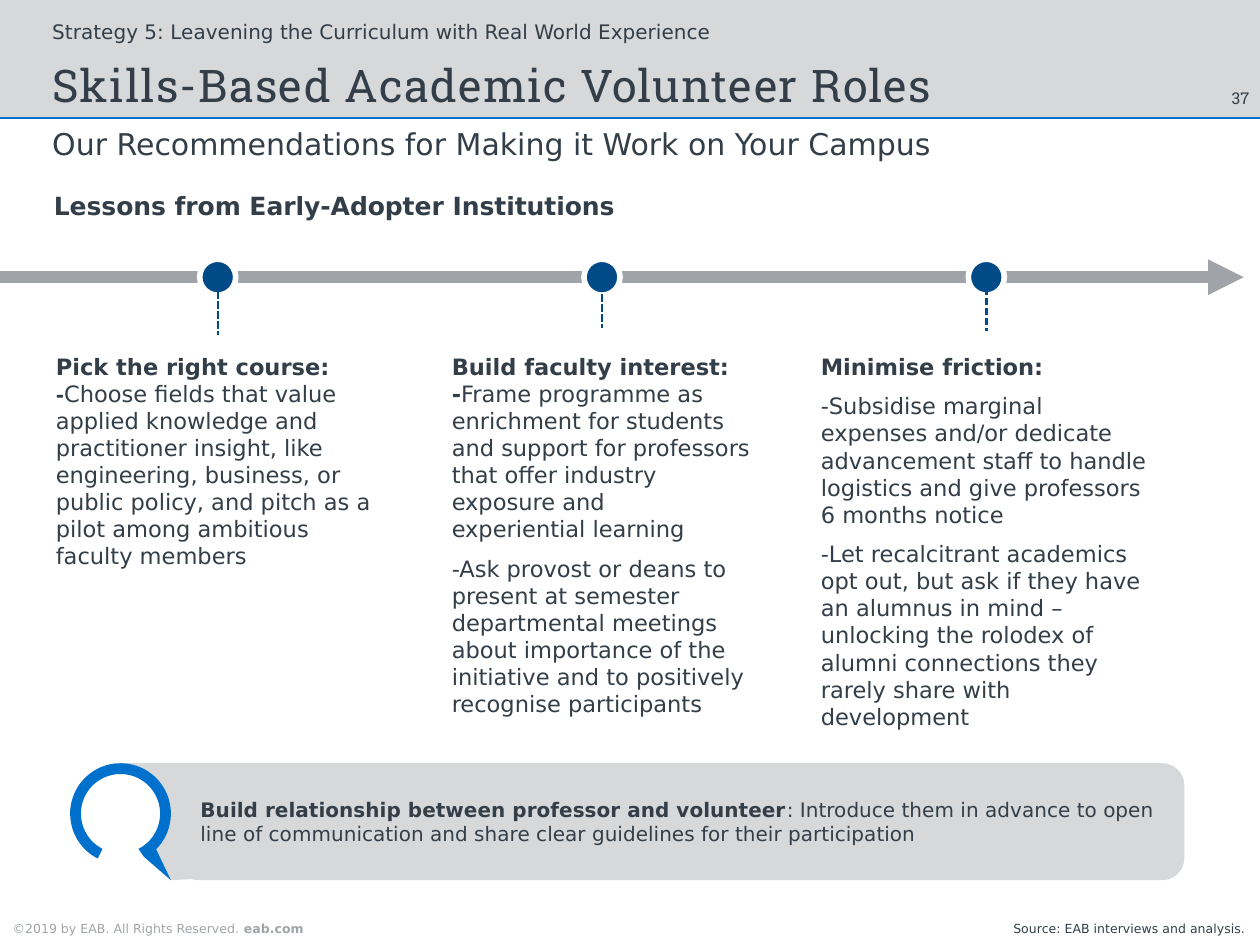
import math

from lxml import etree
from pptx import Presentation
from pptx import util as u
from pptx.dml.color import RGBColor
from pptx.enum import dml, shapes, text
from pptx.oxml.ns import qn

WIDTH, HEIGHT = 7, 5.25
MARGIN = 0.29
BAND = HEIGHT / 8
AXIS_Y = 1.54
FIRST_DOT, DOT_GAP, DOT = 1.21, 2.135, 0.2
DASH = 0.24
COLUMN_TOP = 1.94
SANS, SLAB = "DejaVu Sans", "Roboto Slab"
COLORS = {
    "ink": "333E48", "muted": "A0A4A9", "panel": "D6D8DA",
    "blue": "0070CD", "navy": "004A88", "white": "FFFFFF",
}
BREAK = "\n"

# Each stage: text left, text width, height, start of dashed line, paragraphs of (text, bold, size)
STAGES = [
    (0.29, 1.85, 1.25, 1.62, [
        [("Pick the right course:", True, 9), BREAK, ("-", True, 8),
         ("Choose fields that value applied knowledge and practitioner insight, like engineering, "
          "business, or public policy, and pitch as a pilot among ambitious faculty members", False, 9)],
    ]),
    (2.49, 1.7, 2.06, 1.58, [
        [("Build faculty interest:", True, 9), BREAK, ("-", True, 9),
         ("Frame programme as enrichment for students and support for professors that offer "
          "industry exposure and  experiential learning", False, 9)],
        [("-Ask provost or deans to present at semester departmental meetings about importance "
          "of the initiative and to positively recognise participants", False, 9)],
    ]),
    (4.54, 1.88, 2.15, 1.6, [
        [("Minimise friction:", True, 9)],
        [("-Subsidise marginal expenses and/or dedicate advancement staff to handle logistics "
          "and give professors 6 months notice", False, 9)],
        [("-Let recalcitrant academics opt out, but ask if they have an alumnus in mind – "
          "unlocking the rolodex of alumni connections they rarely share with development", False, 9)],
    ]),
]


def rgb(name):
    return RGBColor.from_string(COLORS[name])


def inches(*lengths):
    return [u.Inches(length) for length in lengths]


def write(box, paragraphs, color="ink", font=SANS, insets=(0, 0, 0, 0),
          anchor=text.MSO_ANCHOR.TOP, align=text.PP_ALIGN.LEFT):
    """Fill a shape with paragraphs, each a list of (text, bold, size) spans or BREAK."""
    frame = box.text_frame
    frame.word_wrap = True
    frame.vertical_anchor = anchor
    (frame.margin_left, frame.margin_top,
     frame.margin_right, frame.margin_bottom) = inches(*insets)
    for index, spans in enumerate(paragraphs):
        para = frame.add_paragraph() if index else frame.paragraphs[0]
        para.alignment = align
        para.space_before = u.Pt(5 if index else 0)
        for item in spans:
            if item == BREAK:
                para.add_line_break()
                continue
            span = para.add_run()
            span.text, span.font.bold = item[:2]
            span.font.size = u.Pt(item[2])
            span.font.name = font
            span.font.color.rgb = rgb(color)


def add_text(page, area, paragraphs, **style):
    box = page.shapes.add_textbox(*inches(*area))
    write(box, paragraphs, **style)
    box.text_frame.auto_size = text.MSO_AUTO_SIZE.SHAPE_TO_FIT_TEXT


def paint(shape, fill, outline=None, weight=0):
    shape.shadow.inherit = False
    shape.fill.solid()
    shape.fill.fore_color.rgb = rgb(fill)
    if outline:
        shape.line.color.rgb = rgb(outline)
        shape.line.width = u.Pt(weight)
    else:
        shape.line.fill.background()


def add_block(page, kind, area, fill, **outline):
    block = page.shapes.add_shape(kind, *inches(*area))
    paint(block, fill, **outline)
    return block


def add_line(page, start, end, color, weight, dash=None, arrow=False):
    line = page.shapes.add_connector(shapes.MSO_CONNECTOR.STRAIGHT, *inches(*start, *end))
    line.line.color.rgb = rgb(color)
    line.line.width = u.Pt(weight)
    if dash:
        line.line.dash_style = dash
    if arrow:
        etree.SubElement(line.line._get_or_add_ln(), qn("a:tailEnd"), type="triangle")
    etree.SubElement(line._element.spPr, qn("a:effectLst"))


def add_outline(page, points, fill):
    corners = [inches(*point) for point in points]
    builder = page.shapes.build_freeform(*corners[0])
    builder.add_line_segments(corners[1:], close=True)
    paint(builder.convert_to_shape(), fill)


def arc(center, radius, start, end, steps=60):
    """Points along a circle; degrees run clockwise from the right."""
    angles = [math.radians(start + (end - start) * step / steps) for step in range(steps + 1)]
    return [(center[0] + radius * math.cos(a), center[1] + radius * math.sin(a)) for a in angles]


def add_header(page):
    add_block(page, shapes.MSO_SHAPE.RECTANGLE, (0, 0, WIDTH, BAND), "panel")
    add_line(page, (0, BAND), (WIDTH, BAND), "blue", 0.75)
    add_text(page, (6.74, 0.49, 0.2, 0.11), [[("37", False, 6.5)]],
             font=SLAB, align=text.PP_ALIGN.RIGHT)
    add_text(page, (MARGIN, 0.11, 5.65, 0.13),
             [[("Strategy 5: Leavening the Curriculum with Real World Experience", False, 8)]])
    add_text(page, (MARGIN, 0.7, 6.42, 0.2),
             [[("Our Recommendations for Making it Work on Your Campus", False, 12)]])

    title = page.shapes.title
    title.left, title.top, title.width, title.height = inches(MARGIN, 0.34, 5.98, 0.28)
    write(title, [[("Skills-Based Academic Volunteer Roles", False, 18)]],
          font=SLAB, anchor=text.MSO_ANCHOR.BOTTOM)
    title.text_frame.auto_size = text.MSO_AUTO_SIZE.NONE
    para = title.text_frame.paragraphs[0]
    para.line_spacing = u.Pt(20)
    para.runs[0].font._element.set("spc", "50")
    # The title must lie in front of the header band
    page.shapes._spTree.append(title._element)


def add_timeline(page):
    add_text(page, (0.3, 1.06, 3.74, 0.17),
             [[("Lessons from Early-Adopter Institutions", True, 10)]])
    add_line(page, (0, AXIS_Y), (6.91, AXIS_Y), "muted", 4.75, arrow=True)
    for index, (left, width, height, dash_top, paragraphs) in enumerate(STAGES):
        center = FIRST_DOT + index * DOT_GAP
        add_block(page, shapes.MSO_SHAPE.OVAL,
                  (center - DOT / 2, AXIS_Y - DOT / 2, DOT, DOT),
                  "navy", outline="white", weight=2.25)
        add_line(page, (center, dash_top), (center, dash_top + DASH), "navy", 1,
                 dash=dml.MSO_LINE.SQUARE_DOT)
        add_text(page, (left, COLUMN_TOP, width, height), paragraphs, insets=(0.02,) * 4)


def add_callout(page):
    add_outline(page, [(0.67, 4.24), (1.12, 4.24), (1.12, 4.88), (0.95, 4.89), (0.81, 4.73),
                       (0.87, 4.65), (0.91, 4.58), (0.91, 4.45), (0.85, 4.34), (0.78, 4.29)],
                "panel")
    panel = add_block(page, shapes.MSO_SHAPE.ROUNDED_RECTANGLE, (0.98, 4.24, 5.6, 0.65), "panel")
    panel.adjustments[0] = 0.19
    write(panel, [[("Build relationship between professor and volunteer", True, 8),
                   (": Introduce them in advance to open line of communication and share clear "
                    "guidelines for their participation", False, 8)]],
          insets=(0.1, 0.05, 0.1, 0.05), anchor=text.MSO_ANCHOR.MIDDLE)
    center, tail = (0.67, 4.52), [(0.95, 4.89), (0.8, 4.76)]
    ring = arc(center, 0.28, 117, 405) + tail + arc(center, 0.22, 423, 117)
    add_outline(page, ring, "blue")


def add_footer(page):
    bottom = text.MSO_ANCHOR.BOTTOM
    add_text(page, (0, 5.12, 2.27, 0.13),
             [[("©2019 by EAB. All Rights Reserved. ", False, 5), ("eab.com", True, 5)]],
             color="muted", insets=(0.07, 0, 0.07, 0.05), anchor=bottom)
    add_text(page, (5.63, 5.12, 1.37, 0.13),
             [[("Source: EAB interviews and analysis.", False, 5)]],
             insets=(0, 0, 0.07, 0.05), anchor=bottom)


def main():
    deck = Presentation()
    deck.slide_width, deck.slide_height = inches(WIDTH, HEIGHT)
    page = deck.slides.add_slide(deck.slide_layouts[5])
    add_header(page)
    add_timeline(page)
    add_callout(page)
    add_footer(page)
    deck.save("out.pptx")


if __name__ == "__main__":
    main()
